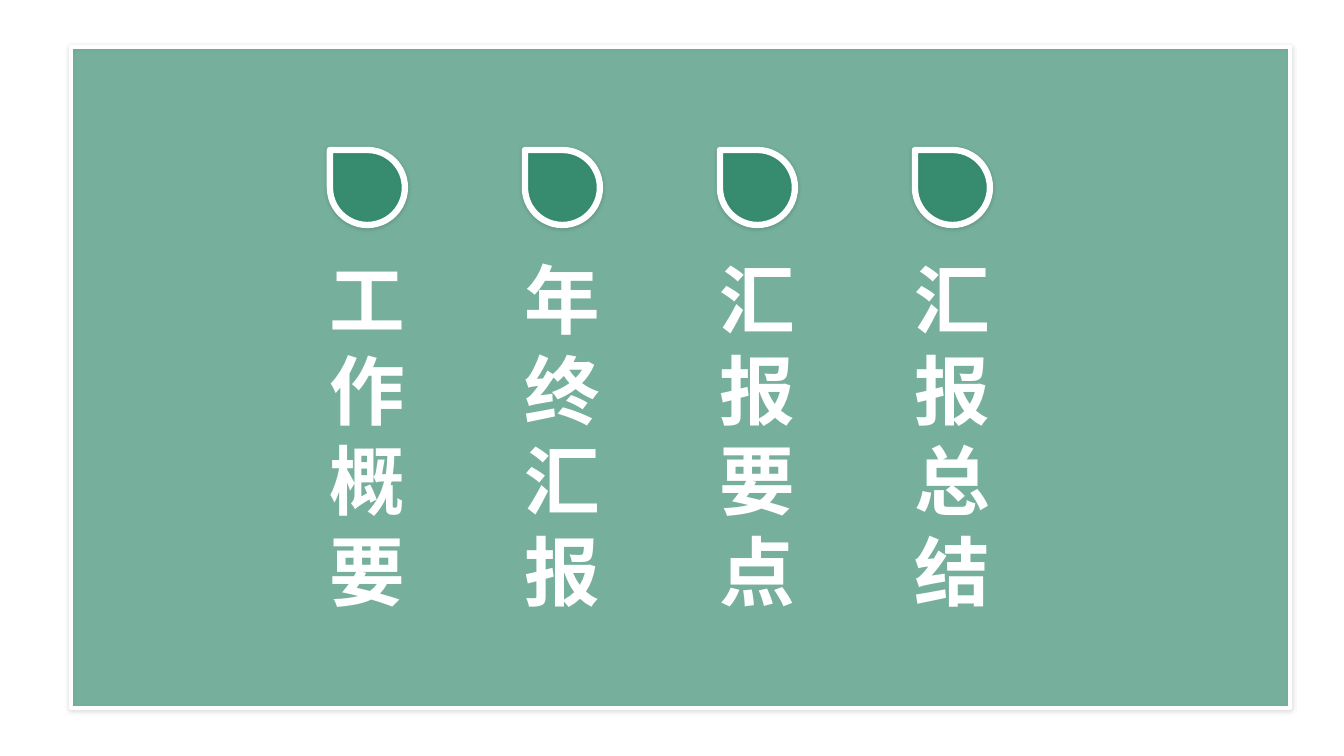
from lxml.etree import SubElement
from pptx import Presentation
from pptx.dml.color import RGBColor
from pptx.enum.shapes import MSO_SHAPE as SHAPE
from pptx.enum.text import MSO_AUTO_SIZE as FIT, PP_ALIGN as ALIGN
from pptx.oxml.ns import qn
from pptx.util import Pt

PX = 914400 / 100.8
COLORS = {"green": "02754D", "white": "FFFFFF", "shadow": "000000"}
TOPICS = ["工作概要", "年终汇报", "汇报要点", "汇报总结"]
FIRST_LEFT, PITCH = 330, 195
DROP_TOP, DROP_SIZE = 150, 75
TITLE_TOP, TITLE_WIDTH, TITLE_HEIGHT = 248, 132, 377


def px(n):
    return round(n * PX)


class Deck:
    """Holds the style and the current slide, and draws its elements."""

    def __init__(self, font):
        self.prs = Presentation()
        self.prs.slide_width, self.prs.slide_height = px(1344), px(756)
        self.s = self.prs.slides.add_slide(self.prs.slide_layouts[6])
        self.font = font

    def color(self, name):
        return RGBColor.from_string(COLORS[name])

    def panel(self, kind, x, y, w, h, line_width):
        sp = self.s.shapes.add_shape(kind, px(x), px(y), px(w), px(h))
        sp.fill.solid()
        sp.fill.fore_color.rgb = self.color("green")
        sp.line.color.rgb = self.color("white")
        sp.line.width = Pt(line_width)
        props = sp._element.spPr
        tint = props.find(qn("a:solidFill")).find(qn("a:srgbClr"))
        SubElement(tint, qn("a:alpha"), val="50000")
        self.soft_shadow(sp)
        return sp

    def soft_shadow(self, sp):
        sp.shadow.inherit = False
        effects = sp._element.spPr.find(qn("a:effectLst"))
        outer = SubElement(effects, qn("a:outerShdw"), blurRad=str(Pt(3)),
                           dist=str(Pt(1)), dir="5400000", rotWithShape="0")
        clr = SubElement(outer, qn("a:srgbClr"), val=COLORS["shadow"])
        SubElement(clr, qn("a:alpha"), val="15000")

    def drop(self, x, y, size):
        sp = self.panel(SHAPE.TEAR, x, y, size, size, 4.5)
        sp._element.spPr.find(qn("a:xfrm")).set("flipH", "1")

    def title(self, text, x, y, w, h):
        tf = self.s.shapes.add_textbox(px(x), px(y), px(w), px(h)).text_frame
        tf.word_wrap = True
        tf.auto_size = FIT.SHAPE_TO_FIT_TEXT
        tf.text = text
        p = tf.paragraphs[0]
        p.alignment = ALIGN.CENTER
        r = p.runs[0]
        r.font.name, r.font.size, r.font.bold = self.font, Pt(54), True
        r.font.color.rgb = self.color("white")
        SubElement(r.font._element, qn("a:ea"), typeface=self.font)


def main():
    deck = Deck("Arial")
    deck.panel(SHAPE.RECTANGLE, 71, 47, 1219, 661, 3)
    for i, topic in enumerate(TOPICS):
        left = FIRST_LEFT + i * PITCH
        title_left = left + (DROP_SIZE - TITLE_WIDTH) // 2
        deck.title(topic, title_left, TITLE_TOP, TITLE_WIDTH, TITLE_HEIGHT)
        deck.drop(left, DROP_TOP, DROP_SIZE)
    deck.prs.save("out.pptx")


if __name__ == "__main__":
    main()
